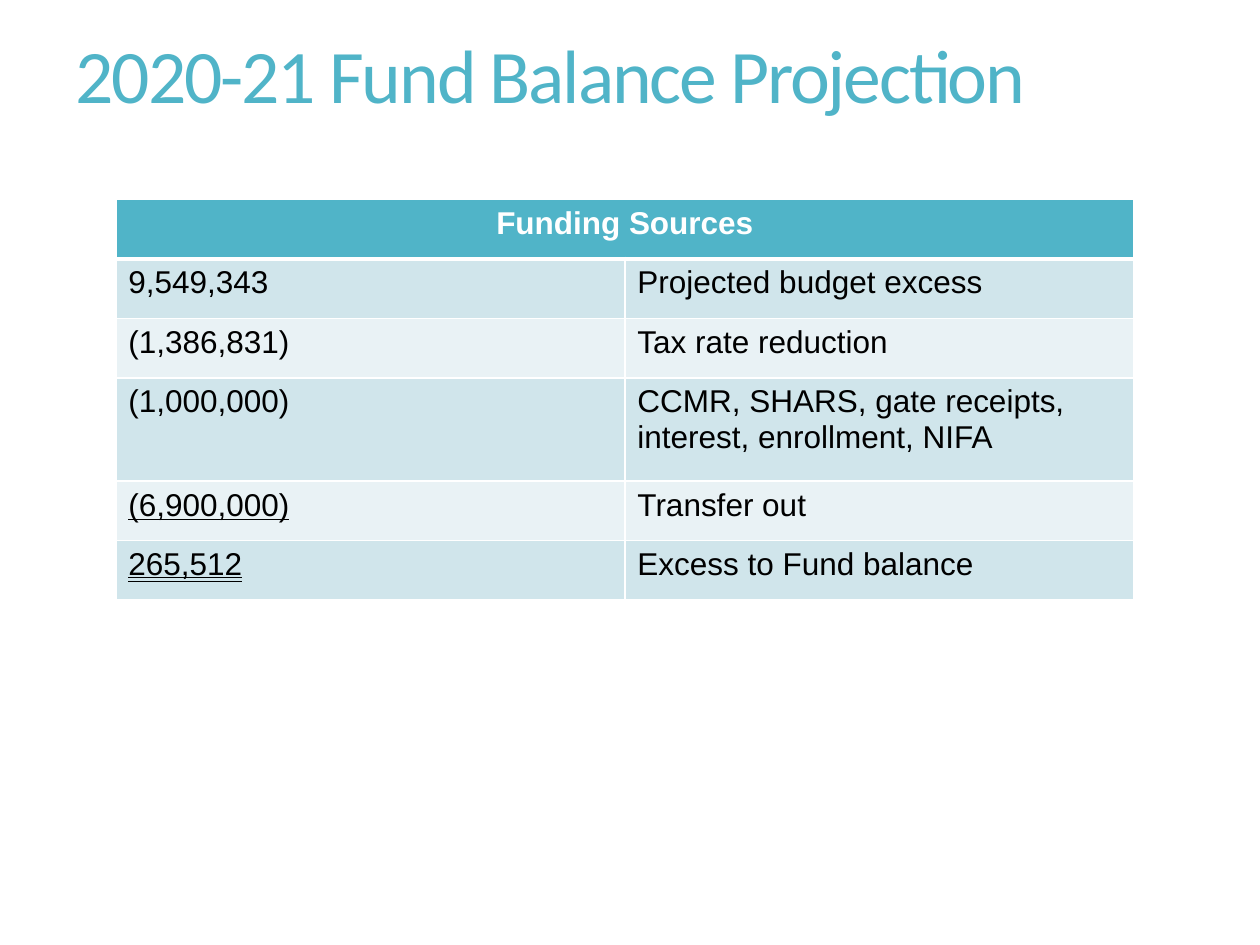
from dataclasses import dataclass

from lxml.etree import SubElement
from pptx import Presentation
from pptx.dml.color import RGBColor
from pptx.enum.text import MSO_ANCHOR, MSO_AUTO_SIZE, MSO_UNDERLINE, PP_ALIGN
from pptx.oxml.ns import qn
from pptx.util import Pt


@dataclass(frozen=True)
class Theme:
    accent: str = "50B4C8"
    band_dark: str = "D0E5EB"
    band_light: str = "E9F2F5"
    white: str = "FFFFFF"
    black: str = "000000"
    title_font: str = "Calibri"
    table_font: str = "Arial"
    title_size: float = 43.2
    table_size: float = 18


THEME = Theme()
FUNDING = [
    ("9,549,343", "Projected budget excess", None),
    ("(1,386,831)", "Tax rate reduction", None),
    ("(1,000,000)", "CCMR, SHARS, gate receipts, interest, enrollment, NIFA", None),
    ("(6,900,000)", "Transfer out", MSO_UNDERLINE.SINGLE_LINE),
    ("265,512", "Excess to Fund balance", MSO_UNDERLINE.DOUBLE_LINE),
]
COLUMN_WIDTH = 290.9
ROW_HEIGHTS = [34, 34, 34, 59, 34, 34]


def format_text(run, color, **values):
    for name, value in values.items():
        setattr(run.font, name, value)
    run.font.color.rgb = RGBColor.from_string(color)


def add_title(slide, text):
    title = slide.shapes.title
    place = {"left": 36, "top": 18, "width": 644.4, "height": 54}
    for name, value in place.items():
        setattr(title, name, Pt(value))
    frame = title.text_frame
    frame.auto_size = MSO_AUTO_SIZE.NONE
    frame.vertical_anchor = MSO_ANCHOR.MIDDLE
    paragraph = frame.paragraphs[0]
    paragraph.alignment = PP_ALIGN.LEFT
    paragraph.line_spacing = 0.9
    run = paragraph.add_run()
    run.text = text
    format_text(run, THEME.accent, name=THEME.title_font, size=Pt(THEME.title_size))
    run.font._element.set("spc", "-120")


def set_borders(cell, widths):
    """Draw white cell borders; widths are for left, right, top and bottom."""
    properties = cell._tc.get_or_add_tcPr()
    for side, width in zip("LRTB", widths):
        line = SubElement(properties, qn(f"a:ln{side}"), w=str(Pt(width)))
        fill = SubElement(line, qn("a:solidFill"))
        SubElement(fill, qn("a:srgbClr"), val=THEME.white)


def style_cell(cell, fill, top=1, bottom=1):
    set_borders(cell, (1, 1, top, bottom))
    cell.fill.solid()
    cell.fill.fore_color.rgb = RGBColor.from_string(fill)


def write_cell(cell, text, color, alignment=PP_ALIGN.LEFT, **values):
    paragraph = cell.text_frame.paragraphs[0]
    paragraph.alignment = alignment
    run = paragraph.add_run()
    run.text = text
    format_text(run, color, name=THEME.table_font, size=Pt(THEME.table_size), **values)


def add_funding_table(slide, heading, entries):
    table = slide.shapes.add_table(
        len(entries) + 1, 2, Pt(66.2), Pt(114),
        Pt(2 * COLUMN_WIDTH), Pt(sum(ROW_HEIGHTS)),
    ).table
    for column in table.columns:
        column.width = Pt(COLUMN_WIDTH)
    for row, height in zip(table.rows, ROW_HEIGHTS):
        row.height = Pt(height)

    header = table.cell(0, 0)
    header.merge(table.cell(0, 1))
    for cell in table.rows[0].cells:
        style_cell(cell, THEME.accent, bottom=3)
    write_cell(header, heading, THEME.white, PP_ALIGN.CENTER, bold=True)

    for index, (amount, source, underline) in enumerate(entries, start=1):
        band = THEME.band_dark if index % 2 else THEME.band_light
        for cell in table.rows[index].cells:
            style_cell(cell, band, top=3 if index == 1 else 1)
        write_cell(table.cell(index, 0), amount, THEME.black,
                   bold=False, underline=underline)
        write_cell(table.cell(index, 1), source, THEME.black, bold=False)


def main():
    presentation = Presentation()
    presentation.slide_width = Pt(720)
    presentation.slide_height = Pt(540)
    slide = presentation.slides.add_slide(presentation.slide_layouts[5])
    add_title(slide, "2020-21 Fund Balance Projection")
    add_funding_table(slide, "Funding Sources", FUNDING)
    presentation.save("out.pptx")


if __name__ == "__main__":
    main()
